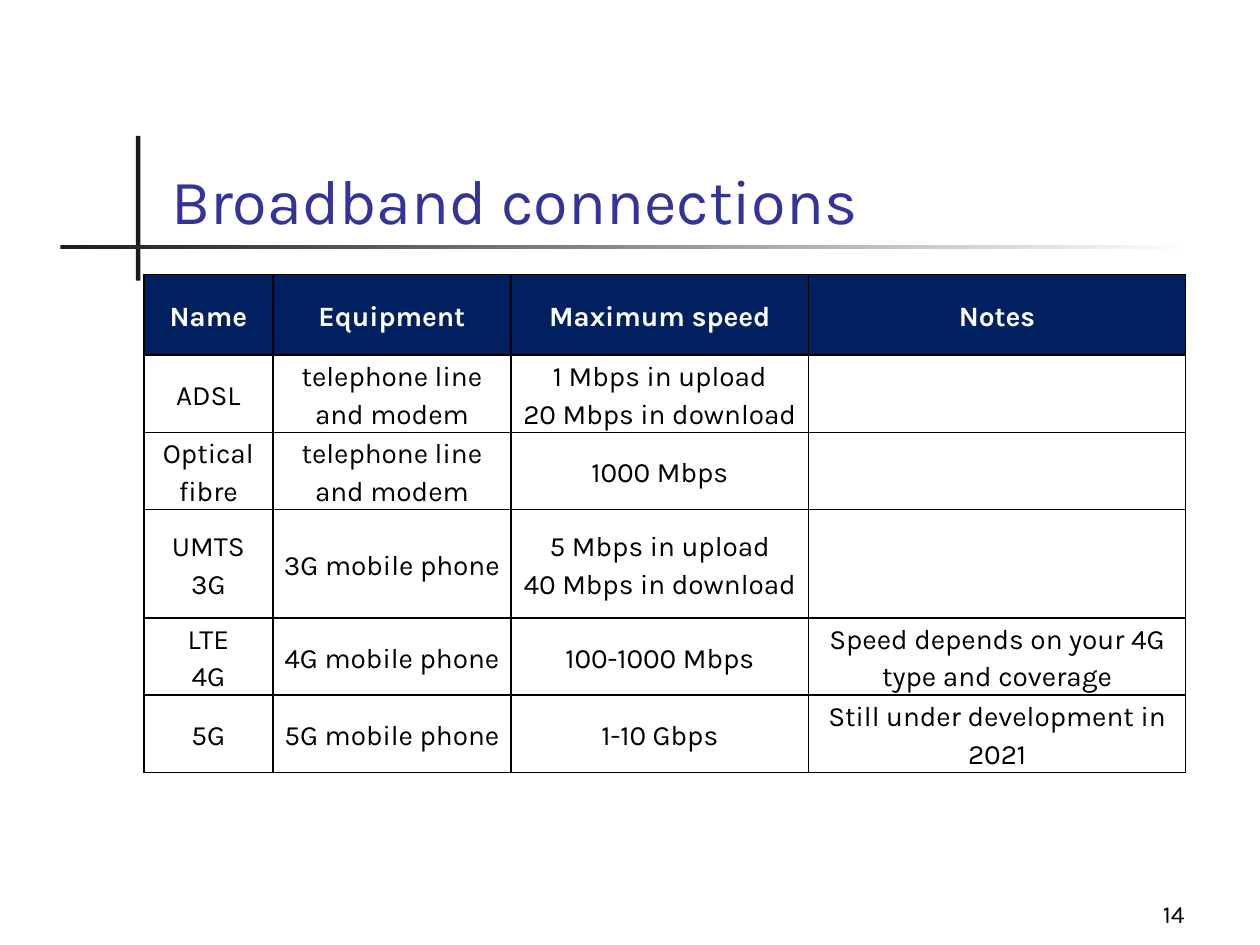
from copy import deepcopy

from lxml.etree import SubElement
from pptx import Presentation
from pptx.dml.color import RGBColor
from pptx.enum.shapes import MSO_SHAPE
from pptx.enum.text import MSO_ANCHOR, PP_ALIGN
from pptx.oxml.ns import qn
from pptx.util import Cm, Pt

COLORS = {
    "ink": "1C1C1C",
    "white": "FFFFFF",
    "title": "333399",
    "header": "002060",
    "black": "000000",
}


def write(frame, text, size=16, color="black", bold=False,
          align=PP_ALIGN.LEFT, line_spacing=None, space=None):
    """Fill a text frame; \\n starts a paragraph and \\v breaks a line."""
    frame.text = text
    for paragraph in frame.paragraphs:
        paragraph.alignment = align
        paragraph.line_spacing = line_spacing
        paragraph.space_before = paragraph.space_after = space
        for run in paragraph.runs:
            run.font.name = "Karla"
            run.font.size = Pt(size)
            run.font.bold = bold
            run.font.color.rgb = RGBColor.from_string(COLORS[color])
        for line_break in paragraph._p.findall(qn("a:br")):
            line_break.append(deepcopy(paragraph.runs[0].font._element))


def add_borders(cell, color, width):
    """Draw all four sides; called before the fill, which must follow them."""
    properties = cell._tc.get_or_add_tcPr()
    for side in ("lnL", "lnR", "lnT", "lnB"):
        line = SubElement(properties, qn(f"a:{side}"), w=str(Pt(width)))
        solid = SubElement(line, qn("a:solidFill"))
        SubElement(solid, qn("a:srgbClr"), val=COLORS[color])


presentation = Presentation()
presentation.slide_width = Cm(25.4)
presentation.slide_height = Cm(19.05)
slide = presentation.slides.add_slide(presentation.slide_layouts[6])

# Crossed rules around the title
upright = slide.shapes.add_shape(
    MSO_SHAPE.RECTANGLE, Cm(2.74), Cm(2.74), Cm(0.09), Cm(2.92))
upright.fill.solid()
upright.fill.fore_color.rgb = RGBColor.from_string(COLORS["ink"])

underline = slide.shapes.add_shape(
    MSO_SHAPE.RECTANGLE, Cm(1.22), Cm(4.94), Cm(22.86), Cm(0.09))
underline.fill.gradient()
underline.fill.gradient_angle = 0
for stop, color, position in zip(
        underline.fill.gradient_stops, ("ink", "white"), (0, 1)):
    stop.color.rgb = RGBColor.from_string(COLORS[color])
    stop.position = position

for rule in (upright, underline):
    rule.line.fill.background()
    rule.shadow.inherit = False

# Page number and title
page_number = slide.shapes.add_textbox(Cm(18.85), Cm(17.58), Cm(5.28), Cm(1.27))
write(page_number.text_frame, "14", size=14, align=PP_ALIGN.RIGHT)
title = slide.shapes.add_textbox(Cm(3.2), Cm(1.73), Cm(21.64), Cm(3.18))
write(title.text_frame, "Broadband connections", size=36, color="title")
for box in (page_number, title):
    box.text_frame.word_wrap = True
    box.text_frame.vertical_anchor = MSO_ANCHOR.BOTTOM

# Connection table
connections = [
    ("Name", "Equipment", "Maximum speed", "Notes"),
    ("ADSL", "telephone line and modem",
     "1 Mbps in upload\n20 Mbps in download", ""),
    ("Optical fibre", "telephone line and modem", "1000 Mbps", ""),
    ("UMTS\n3G", "3G mobile phone",
     "5 Mbps in upload\v40 Mbps in download", ""),
    ("LTE\v4G", "4G mobile phone", "100-1000 Mbps",
     "Speed depends on your 4G type and coverage"),
    ("5G", "5G mobile phone", "1-10 Gbps", "Still under development in 2021"),
]
column_widths = (2.6, 4.8, 6, 7.6)
row_heights = (1.63, 1.37, 1.3, 2.18, 1.12, 1.12)

table = slide.shapes.add_table(
    len(row_heights), len(column_widths), Cm(2.9), Cm(5.53),
    Cm(sum(column_widths)), Cm(sum(row_heights))).table
table.first_row = table.horz_banding = False
for column, width in zip(table.columns, column_widths):
    column.width = Cm(width)
for row, height in zip(table.rows, row_heights):
    row.height = Cm(height)

for row_index, texts in enumerate(connections):
    is_header = row_index == 0
    for column_index, text in enumerate(texts):
        cell = table.cell(row_index, column_index)
        cell.vertical_anchor = MSO_ANCHOR.MIDDLE
        cell.margin_left = cell.margin_right = Cm(0.2)
        cell.margin_top = cell.margin_bottom = 0
        add_borders(cell, "black", 1)
        if is_header:
            cell.fill.solid()
            cell.fill.fore_color.rgb = RGBColor.from_string(COLORS["header"])
        else:
            cell.fill.background()
        write(cell.text_frame, text, bold=is_header,
              color="white" if is_header else "black",
              align=PP_ALIGN.CENTER, line_spacing=1.15,
              space=Pt(3) if is_header else None)

presentation.save("out.pptx")
